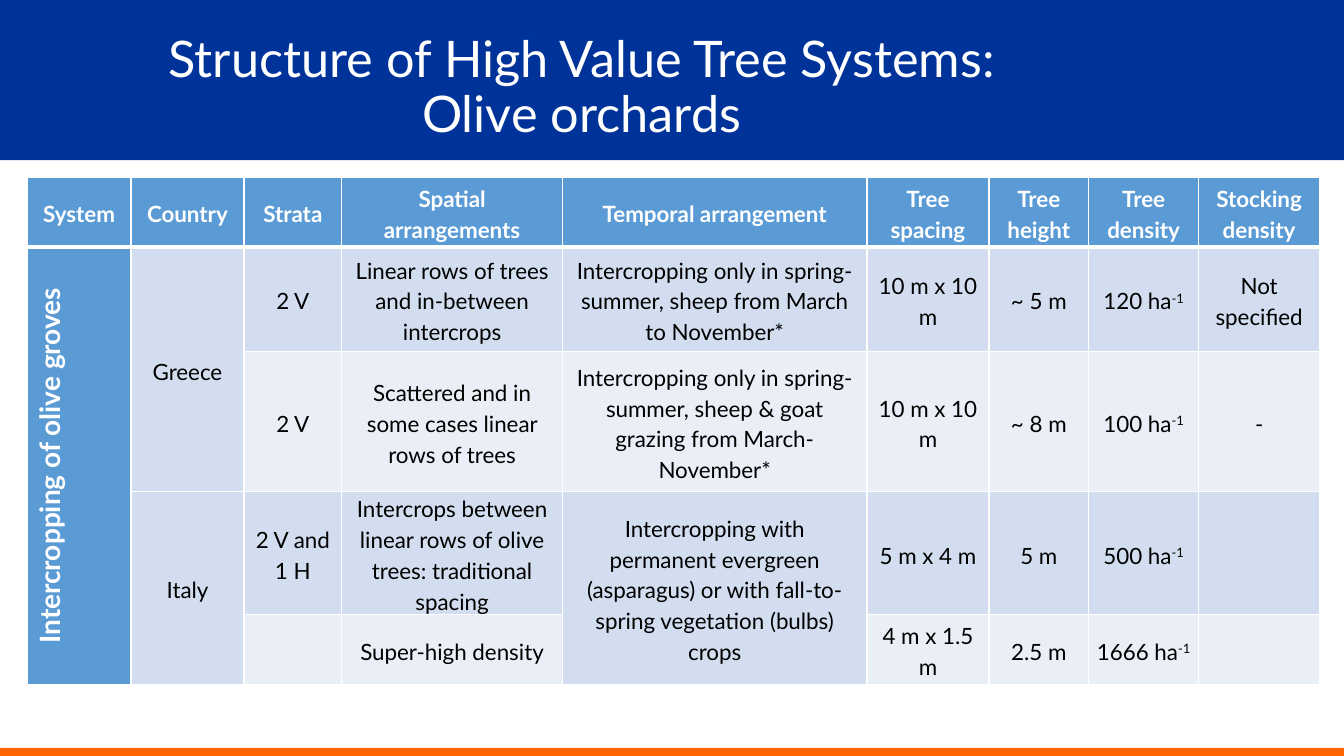
from lxml.etree import SubElement
from pptx import Presentation
from pptx.dml.color import RGBColor
from pptx.enum.shapes import MSO_SHAPE
from pptx.enum.text import MSO_ANCHOR, MSO_AUTO_SIZE, PP_ALIGN
from pptx.oxml.ns import qn
from pptx.util import Inches, Pt

W, H = 13.33, 7.5
FONT = "Lato"
WHITE, BLACK, NAVY, ORANGE = "FFFFFF", "000000", "003399", "FF6600"
BLUE, BANDS = "5B9BD5", ("EAEFF7", "D2DEEF")

COLS = [1.03, 1.12, 0.97, 2.19, 3.02, 1.21, 0.99, 1.09, 1.2]
ROWS = [0.69, 1.04, 1.39, 1.22, 0.69]
# "^" starts a superscript; None is a cell covered by a merge
CELLS = [
    ["System", "Country", "Strata", "Spatial arrangements", "Temporal arrangement",
     "Tree spacing", "Tree height", "Tree density", "Stocking density"],
    ["Intercropping of olive groves", "Greece", "2 V",
     "Linear rows of trees and in-between intercrops",
     "Intercropping only in spring-summer, sheep from March to November*",
     "10 m x 10 m", "~ 5 m", "120 ha^-1", "Not specified"],
    [None, None, "2 V", "Scattered and in some cases linear rows of trees",
     "Intercropping only in spring-summer, sheep & goat grazing from March- November*",
     "10 m x 10 m", "~ 8 m", "100 ha^-1", "-"],
    [None, "Italy", "2 V and 1 H",
     "Intercrops between linear rows of olive trees: traditional spacing",
     "Intercropping with permanent evergreen (asparagus) or with fall-to-spring "
     "vegetation (bulbs) crops",
     "5 m x 4 m", "5 m", "500 ha^-1", ""],
    [None, None, "", "Super-high density", None, "4 m x 1.5 m", "2.5 m", "1666 ha^-1", ""],
]
MERGES = [(1, 0, 4, 0), (1, 1, 2, 1), (3, 1, 4, 1), (3, 4, 4, 4)]


def rgb(color):
    return RGBColor.from_string(color)


def set_font(font, size, color, bold=False):
    for name, value in {"name": FONT, "size": Pt(size), "bold": bold}.items():
        setattr(font, name, value)
    font.color.rgb = rgb(color)


def add_band(s, top, height, color):
    sp = s.shapes.add_shape(MSO_SHAPE.RECTANGLE, 0, Inches(top), Inches(W), Inches(height))
    sp.shadow.inherit = False
    sp.fill.solid()
    sp.fill.fore_color.rgb = rgb(color)
    sp.line.fill.background()
    s.shapes._spTree.insert(2, sp._element)  # behind the title


def add_title(s, text, left, top, width, height):
    sp = s.shapes.title
    box = {"left": left, "top": top, "width": width, "height": height}
    for name, value in box.items():
        setattr(sp, name, Inches(value))
    tf = sp.text_frame
    tf.text = text
    tf.word_wrap = True
    tf.auto_size = MSO_AUTO_SIZE.NONE
    tf.vertical_anchor = MSO_ANCHOR.MIDDLE
    p = tf.paragraphs[0]
    p.alignment, p.line_spacing = PP_ALIGN.CENTER, 0.9
    for r in p.runs:
        set_font(r.font, 36, WHITE)


def set_borders(cell, widths):
    tcPr = cell._tc.get_or_add_tcPr()
    for side, width in widths.items():
        ln = SubElement(tcPr, qn(f"a:ln{side}"), w=str(Pt(width)))
        SubElement(SubElement(ln, qn("a:solidFill")), qn("a:srgbClr"), val=WHITE)


def fill_cell(cell, text, row, col):
    header, system = row == 0, row > 0 and col == 0
    strong = header or system
    set_borders(cell, {"L": 1, "R": 1, "T": 3 if row == 1 else 1, "B": 3 if header else 1})
    cell.fill.solid()
    cell.fill.fore_color.rgb = rgb(BLUE if strong else BANDS[row % 2])
    margins = {"margin_left": 0.07, "margin_right": 0.07, "margin_top": 0, "margin_bottom": 0}
    for name, value in margins.items():
        setattr(cell, name, Inches(value))
    cell.vertical_anchor = MSO_ANCHOR.MIDDLE
    if system:
        cell._tc.get_or_add_tcPr().set("vert", "vert270")
    if not text:
        return
    p = cell.text_frame.paragraphs[0]
    p.alignment, p.line_spacing = PP_ALIGN.CENTER, 1.15
    for i, part in enumerate(text.split("^")):
        r = p.add_run()
        r.text = part
        set_font(r.font, 20 if system else 16, WHITE if strong else BLACK, strong)
        if i:
            r.font._element.set("baseline", "30000")


def add_orchard_table(s, left, top):
    table = s.shapes.add_table(len(ROWS), len(COLS), Inches(left), Inches(top),
                               Inches(sum(COLS)), Inches(sum(ROWS))).table
    for column, width in zip(table.columns, COLS):
        column.width = Inches(width)
    for row, height in zip(table.rows, ROWS):
        row.height = Inches(height)
    for i, texts in enumerate(CELLS):
        for j, text in enumerate(texts):
            fill_cell(table.cell(i, j), text, i, j)
    for top_row, first, bottom_row, last in MERGES:
        table.cell(top_row, first).merge(table.cell(bottom_row, last))


def main():
    prs = Presentation()
    prs.slide_width, prs.slide_height = Inches(W), Inches(H)
    s = prs.slides.add_slide(prs.slide_layouts[5])
    # Header and footer bands
    add_band(s, 0, 1.59, NAVY)
    add_band(s, H - 0.08, 0.08, ORANGE)
    # Title and table
    add_title(s, "Structure of High Value Tree Systems:\vOlive orchards", 0.44, 0.39, 10.66, 0.98)
    add_orchard_table(s, 0.27, 1.76)
    prs.save("out.pptx")


if __name__ == "__main__":
    main()
